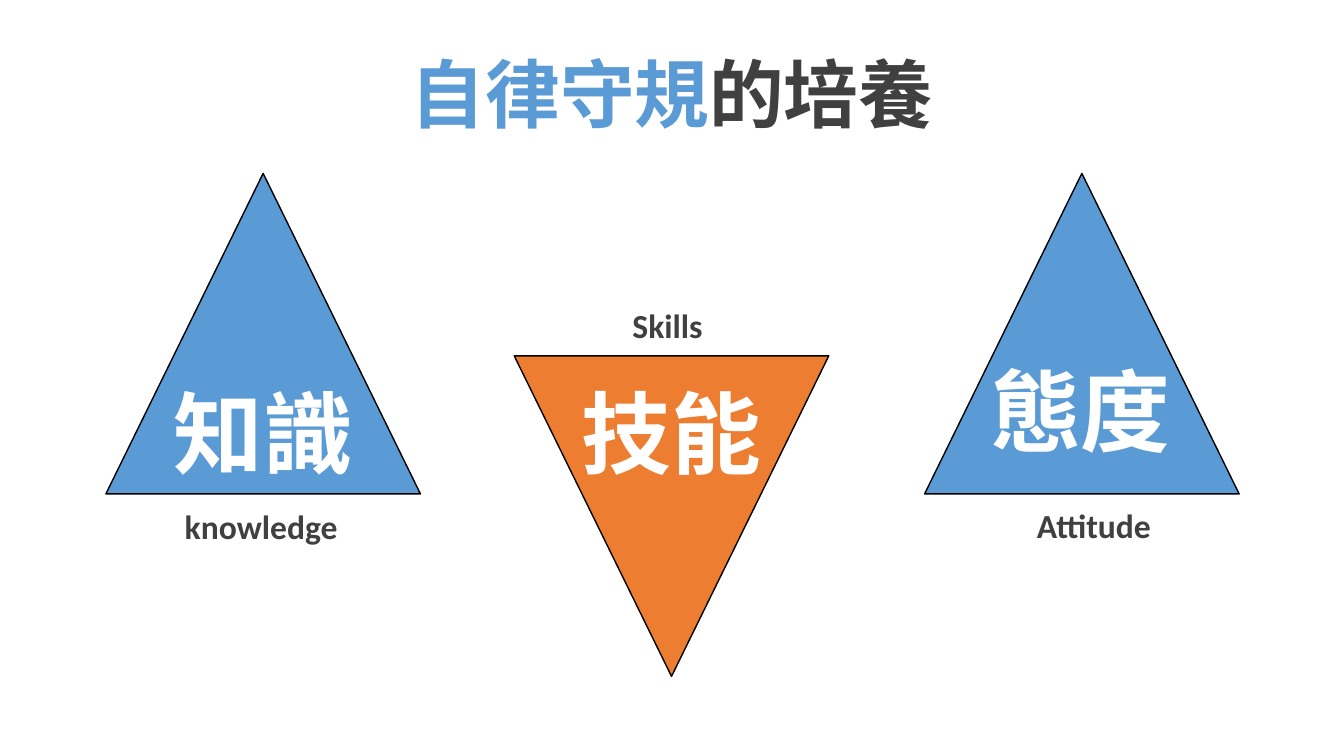
from lxml import etree
from pptx import Presentation
from pptx import util as u
from pptx.dml.color import RGBColor
from pptx.enum import shapes, text
from pptx.oxml.ns import qn

PX = 9144  # one px is a hundredth of an inch
COLORS = {"blue": "5B9BD5", "orange": "ED7D31", "dark": "404040",
          "white": "FFFFFF", "black": "000000"}
LATIN, CHINESE = "Calibri", "Noto Sans CJK TC"
TRIANGLE_WIDTH, TRIANGLE_HEIGHT = 312, 318

presentation = Presentation()
presentation.slide_width = 1333 * PX
presentation.slide_height = 750 * PX
slide = presentation.slides.add_slide(presentation.slide_layouts[6])


def color(name):
    return RGBColor.from_string(COLORS[name])


def add_text(box, parts, size, font):
    """Add a centred bold line; parts are (words, colour name) pairs."""
    shape = slide.shapes.add_textbox(*(length * PX for length in box))
    frame = shape.text_frame
    frame.word_wrap = True
    paragraph = frame.paragraphs[0]
    paragraph.alignment = text.PP_ALIGN.CENTER
    for words, color_name in parts:
        run = paragraph.add_run()
        run.text = words
        run.font.size = u.Pt(size)
        run.font.bold = True
        run.font.name = font
        run.font.color.rgb = color(color_name)
        east_asian = etree.SubElement(run.font._element, qn("a:ea"))
        east_asian.set("typeface", font)
    return frame


title = add_text((0, 41, 1333, 113), [("自律守規", "blue"), ("的培養", "dark")],
                 53.3, CHINESE)
title.vertical_anchor = text.MSO_ANCHOR.MIDDLE
title.paragraphs[0].line_spacing = 0.9

# triangle left, top, rotation, fill; label, left, top; word, left, top
PILLARS = [
    (105, 172, 0, "blue", "knowledge", 103, 497, "知識", 136, 370),
    (510, 353, 180, "orange", "Skills", 506, 298, "技能", 541, 370),
    (917, 172, 0, "blue", "Attitude", 929, 496, "態度", 947, 348),
]
for (left, top, rotation, fill, label, label_left, label_top,
     word, word_left, word_top) in PILLARS:
    triangle = slide.shapes.add_shape(
        shapes.MSO_SHAPE.ISOSCELES_TRIANGLE, left * PX, top * PX,
        TRIANGLE_WIDTH * PX, TRIANGLE_HEIGHT * PX)
    triangle.rotation = rotation
    triangle.shadow.inherit = False
    triangle.fill.solid()
    triangle.fill.fore_color.rgb = color(fill)
    triangle.line.color.rgb = color("black")
    triangle.line.width = u.Pt(1)
    add_text((label_left, label_top, TRIANGLE_WIDTH, 50),
             [(label, "dark")], 24, LATIN)
    add_text((word_left, word_top, 250, 118), [(word, "white")], 64, CHINESE)

presentation.save("out.pptx")
